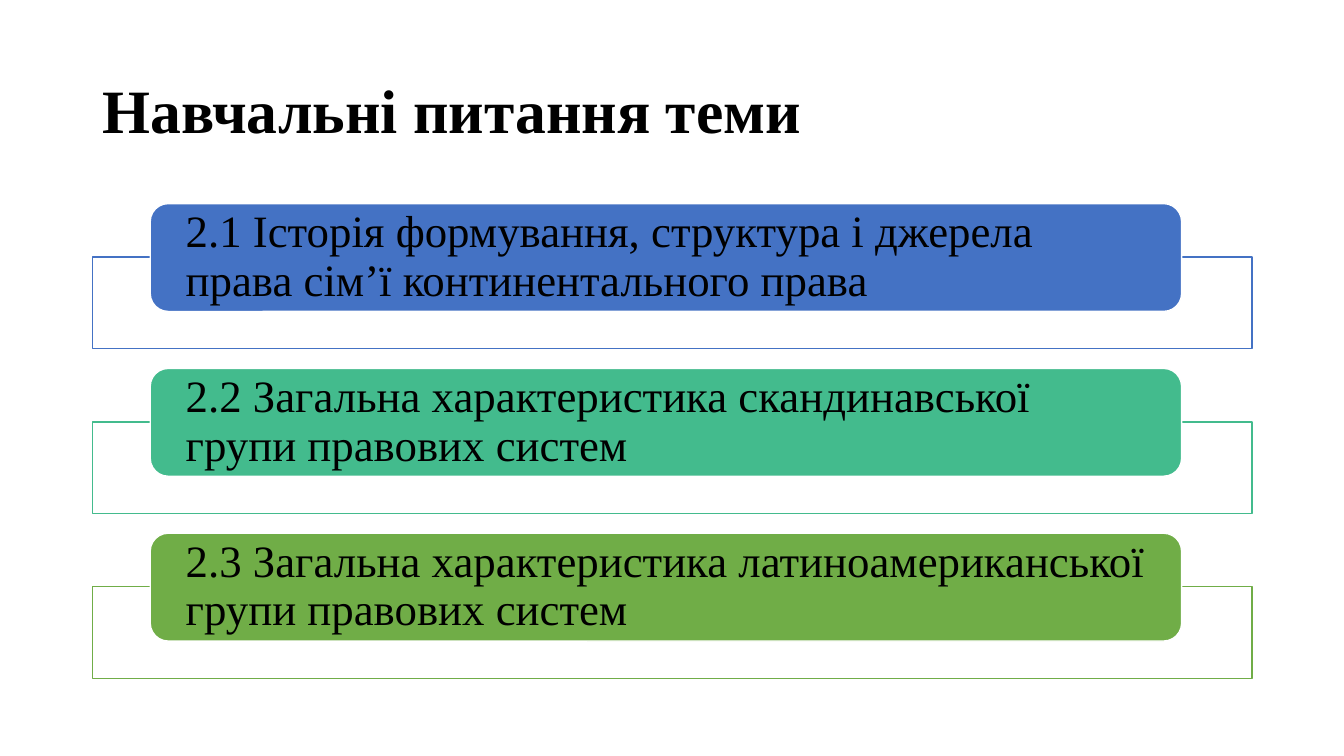
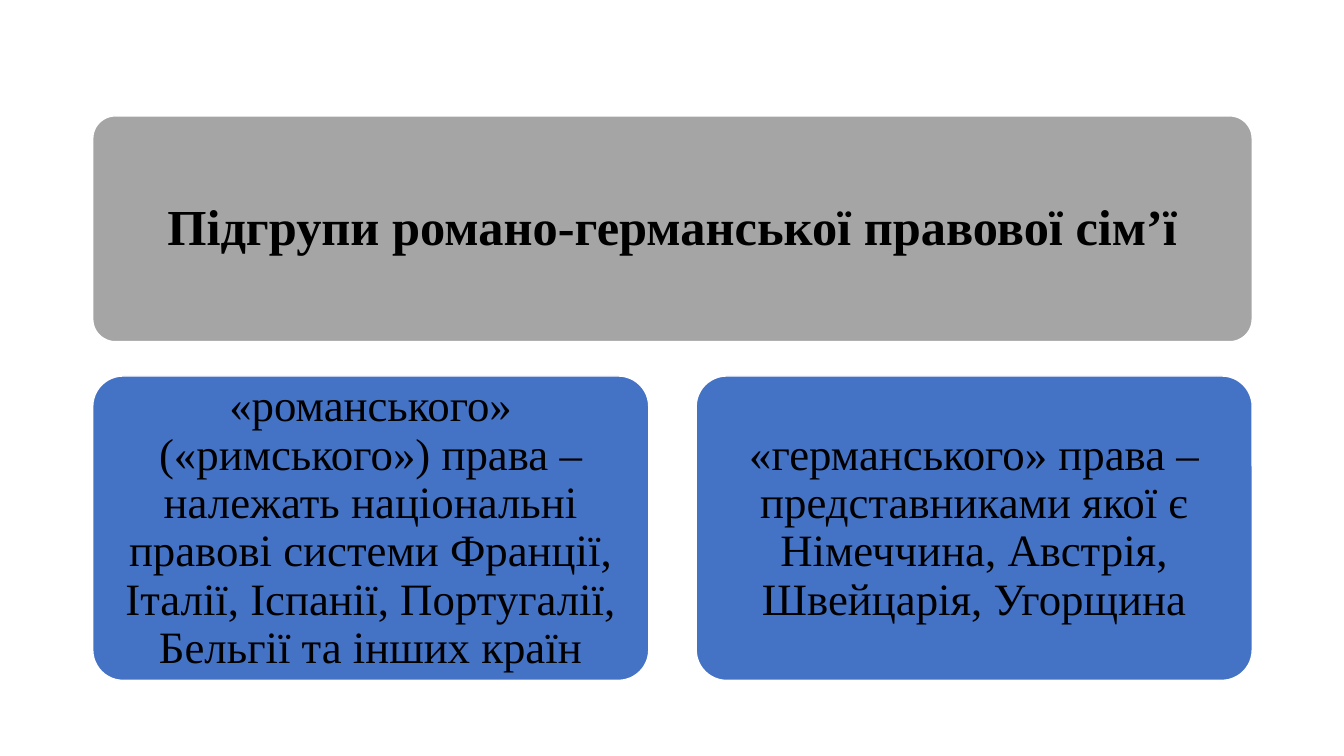
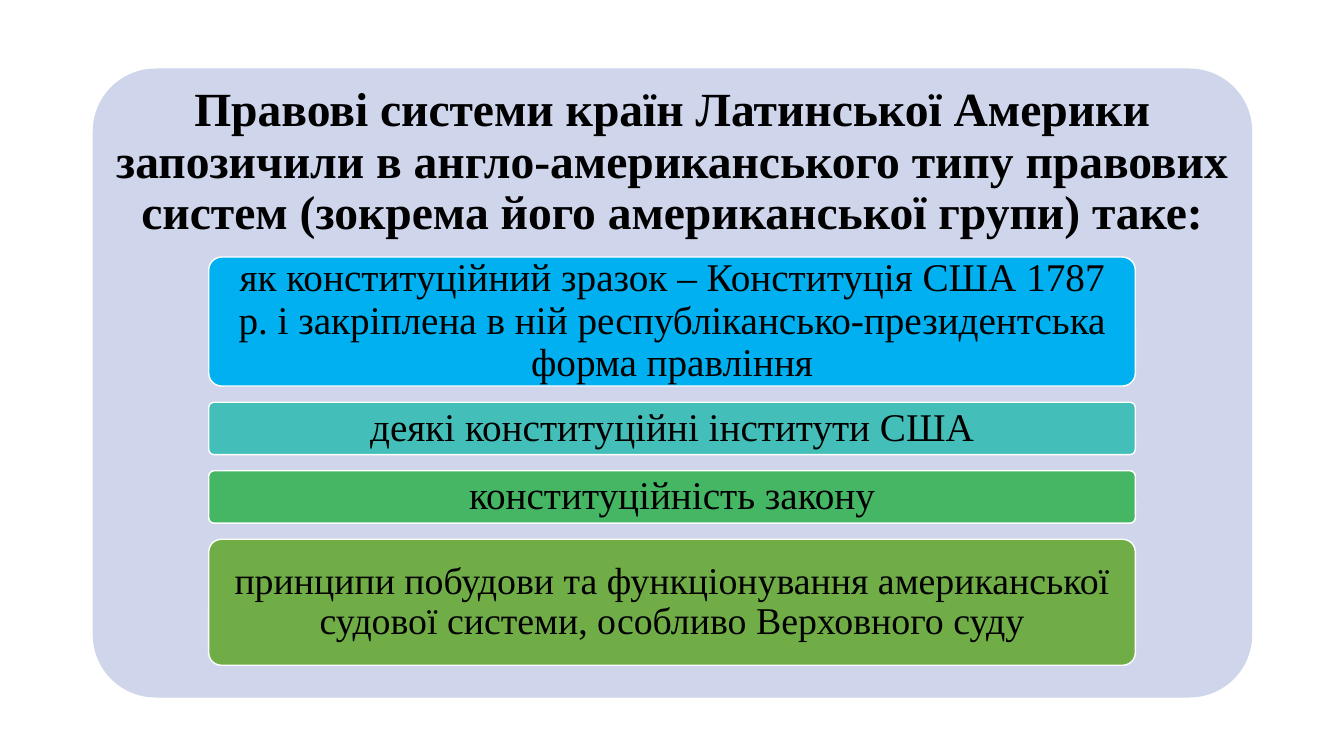
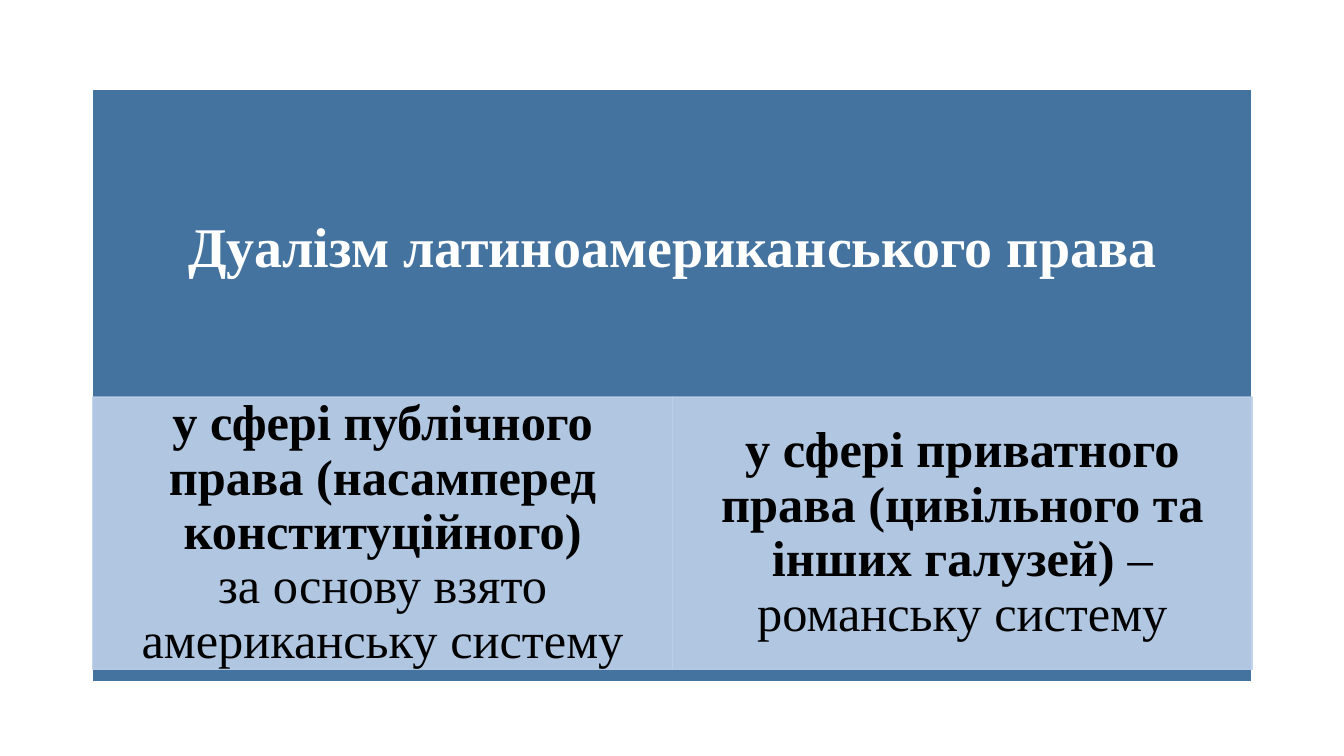
from lxml.etree import SubElement
from pptx import Presentation
from pptx.dml.color import RGBColor
from pptx.enum.shapes import MSO_SHAPE
from pptx.enum.text import MSO_ANCHOR, PP_ALIGN
from pptx.oxml.ns import qn
from pptx.util import Inches, Pt

FONT = "Times New Roman"
BLACK, WHITE, BLUE, GREEN = "000000", "FFFFFF", "4472C4", "70AD47"
LEFT, WIDTH = 0.92, 11.5

TITLE = "Навчальні питання теми"
QUESTIONS = [
    ("2.1 Історія формування, структура і джерела права сім’ї континентального права", BLUE),
    ("2.2 Загальна характеристика скандинавської групи правових систем", "43BB8D"),
    ("2.3 Загальна характеристика латиноамериканської групи правових систем", GREEN),
]

SUBGROUPS_HEADING = "Підгрупи романо-германської правової сім’ї"
SUBGROUPS = [
    "«романського» («римського») права – належать національні правові системи Франції, "
    "Італії, Іспанії, Португалії, Бельгії та інших країн",
    "«германського» права – представниками якої є Німеччина, Австрія, Швейцарія, Угорщина",
]

BORROWED_HEADING = (
    "Правові системи країн Латинської Америки запозичили в англо-американського типу "
    "правових систем (зокрема його американської групи) таке:"
)
BORROWED = [  # text, colour, height, text size
    ("як конституційний зразок – Конституція США 1787 р. і закріплена в ній "
     "республікансько-президентська форма правління", "00B0F0", 1.28, 28),
    ("деякі конституційні інститути США", "43BEB9", 0.52, 28),
    ("конституційність закону", "45B664", 0.52, 28),
    ("принципи побудови та функціонування американської судової системи, "
     "особливо Верховного суду", GREEN, 1.25, 27),
]

DUALISM_HEADING = "Дуалізм латиноамериканського права"
DUALISM = [  # bold part, break between the parts, regular part
    ("у сфері публічного права (насамперед конституційного)", True,
     "за основу взято американську систему"),
    ("у сфері приватного права (цивільного та інших галузей) ", False,
     "– романську систему"),
]


def color(value):
    return RGBColor.from_string(value)


def add_run(paragraph, text, size, bold=False, ink=BLACK):
    run = paragraph.add_run()
    run.text = text
    for name, value in {"name": FONT, "size": Pt(size), "bold": bold}.items():
        setattr(run.font, name, value)
    run.font.color.rgb = color(ink)


def start_text(shape, inset_x, inset_y, align=PP_ALIGN.CENTER):
    """Prepare the text frame of a shape and return its first paragraph."""
    frame = shape.text_frame
    settings = {
        "word_wrap": True,
        "vertical_anchor": MSO_ANCHOR.MIDDLE,
        "margin_left": Inches(inset_x),
        "margin_right": Inches(inset_x),
        "margin_top": Inches(inset_y),
        "margin_bottom": Inches(inset_y),
    }
    for name, value in settings.items():
        setattr(frame, name, value)
    paragraph = frame.paragraphs[0]
    paragraph.alignment = align
    paragraph.line_spacing = 0.9
    return paragraph


def add_panel(slide, box, fill, line=WHITE, kind=MSO_SHAPE.RECTANGLE, corner=None, opacity=None):
    """Add a filled shape; opacity is in percent and covers fill and line."""
    shape = slide.shapes.add_shape(kind, *map(Inches, box))
    shape.shadow.inherit = False
    shape.fill.solid()
    shape.fill.fore_color.rgb = color(fill)
    if line:
        shape.line.color.rgb = color(line)
        shape.line.width = Pt(1)
    else:
        shape.line.fill.background()
    if corner:
        shape.adjustments[0] = corner
    if opacity:
        for tint in shape.element.spPr.iter(qn("a:srgbClr")):
            SubElement(tint, qn("a:alpha")).set("val", str(opacity * 1000))
    return shape


def add_card(slide, box, fill, line=WHITE, corner=0.1):
    return add_panel(slide, box, fill, line, MSO_SHAPE.ROUNDED_RECTANGLE, corner)


def add_label(slide, box, text, size, inset_x, inset_y, ink=BLACK, align=PP_ALIGN.CENTER):
    """Add a bold heading in a text box."""
    label = slide.shapes.add_textbox(*map(Inches, box))
    add_run(start_text(label, inset_x, inset_y, align), text, size, True, ink)


def build_questions(slide):
    add_label(slide, (LEFT, 0.4, WIDTH, 1.45), TITLE, 44, 0.1, 0.05, align=PP_ALIGN.LEFT)
    for index, (text, tint) in enumerate(QUESTIONS):
        top = 2.02 + index * 1.635
        add_panel(slide, (LEFT, top + 0.53, WIDTH, 0.91), WHITE, tint)
        card = add_card(slide, (1.49, top, 10.23, 1.07), tint, corner=0.1667)
        add_run(start_text(card, 0.3, 0, PP_ALIGN.LEFT), text, 32)


def build_subgroups(slide):
    gap = 0.47
    width = (WIDTH - gap) / 2
    heading = add_card(slide, (LEFT, 1.15, WIDTH, 2.24), "A5A5A5")
    add_run(start_text(heading, 0.15, 0.15), SUBGROUPS_HEADING, 36, True)
    for index, text in enumerate(SUBGROUPS):
        card = add_card(slide, (LEFT + index * (width + gap), 3.73, width, 3.02), BLUE)
        add_run(start_text(card, 0.13, 0.13), text, 32)


def build_borrowed(slide):
    add_card(slide, (LEFT, 0.68, WIDTH, 6.24), "CFD5EA", None)
    add_label(slide, (LEFT, 0.68, WIDTH, 1.87), BORROWED_HEADING, 34, 0.14, 0.14)
    top, gap = 2.55, 0.16
    for text, tint, height, size in BORROWED:
        card = add_card(slide, (2.07, top, 9.19, height), tint)
        add_run(start_text(card, 0.08, 0.06), text, size)
        top += height + gap


def build_dualism(slide):
    add_panel(slide, (LEFT, 0.89, WIDTH, 5.87), "43739E")
    add_label(slide, (LEFT, 0.89, WIDTH, 3.17), DUALISM_HEADING, 40, 0.31, 0.31, WHITE)
    width = WIDTH / 2
    for index, (field, breaks, basis) in enumerate(DUALISM):
        box = (LEFT + index * width, 3.94, width, 2.7)
        cell = add_panel(slide, box, "BDD0E9", "BDD0E9", opacity=90)
        paragraph = start_text(cell, 0.28, 0.05)
        add_run(paragraph, field, 36, True)
        if breaks:
            paragraph.add_line_break()
        add_run(paragraph, basis, 36)


def main():
    presentation = Presentation()
    presentation.slide_width = Inches(13.33)
    presentation.slide_height = Inches(7.5)
    blank = presentation.slide_layouts[6]
    for build in (build_questions, build_subgroups, build_borrowed, build_dualism):
        build(presentation.slides.add_slide(blank))
    presentation.save("out.pptx")


if __name__ == "__main__":
    main()
